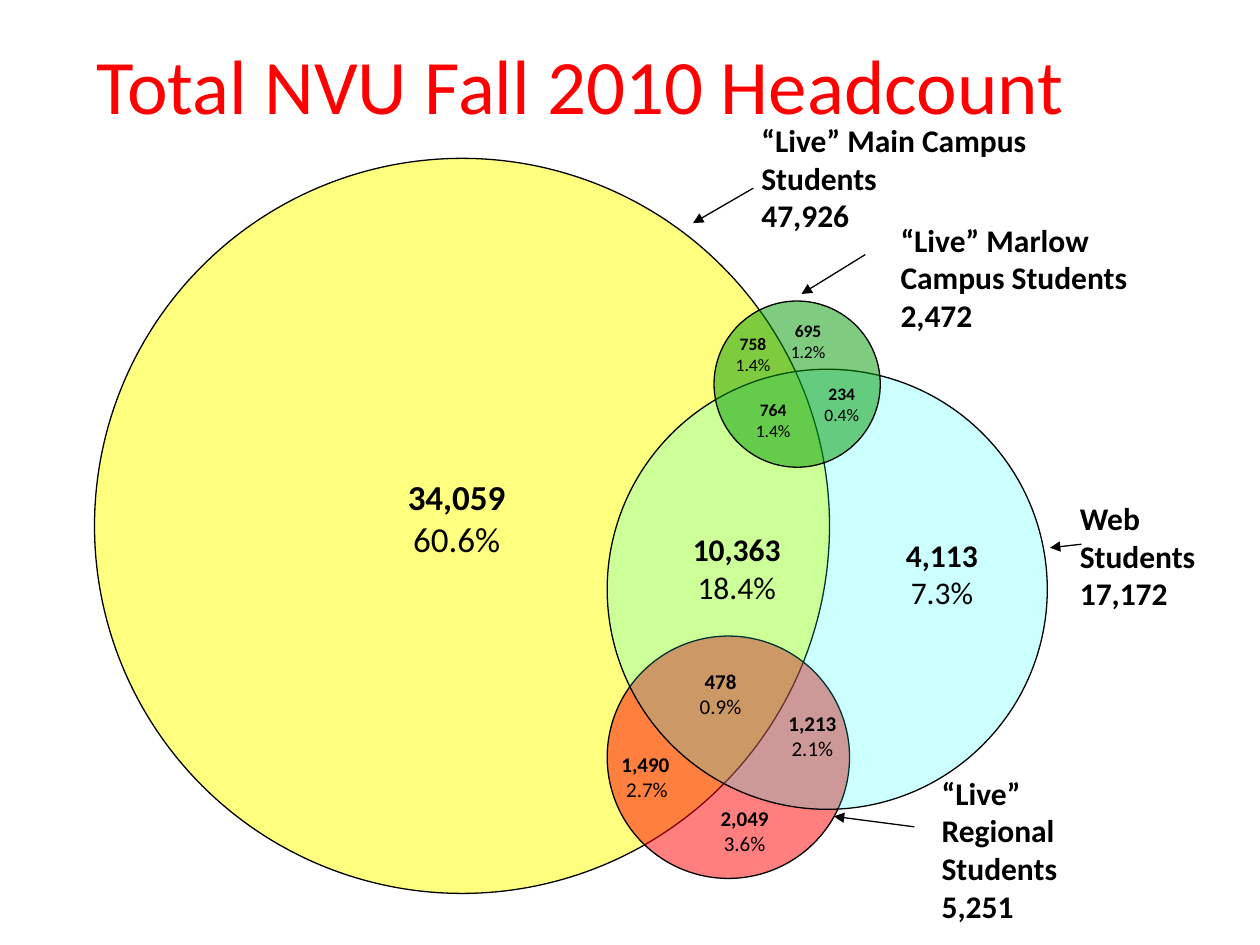
"""Build a Venn diagram slide of student headcount by campus."""
import pptx
import pptx.util
import pptx.dml.color
import pptx.enum.shapes
import pptx.enum.text
import pptx.oxml
import pptx.oxml.ns
from lxml import etree

Pt = pptx.util.Pt
RGBColor = pptx.dml.color.RGBColor
qn = pptx.oxml.ns.qn
LEFT = pptx.enum.text.PP_ALIGN.LEFT
CENTER = pptx.enum.text.PP_ALIGN.CENTER

BLACK = RGBColor(0, 0, 0)
RED = RGBColor(255, 0, 0)
YELLOW = RGBColor(255, 255, 0)
CYAN = RGBColor(0, 255, 255)
GREEN = RGBColor(0, 153, 0)
FONT = "Calibri"


def write_text(shape, lines, size, bold, color=BLACK, align=LEFT):
    """Fill a shape with one paragraph per line; bold has one flag per line."""
    frame = shape.text_frame
    frame.text = "\n".join(lines)
    frame.word_wrap = True
    frame.auto_size = pptx.enum.text.MSO_AUTO_SIZE.NONE
    frame.vertical_anchor = pptx.enum.text.MSO_ANCHOR.TOP
    for paragraph, is_bold in zip(frame.paragraphs, bold):
        paragraph.alignment = align
        font = paragraph.runs[0].font
        font.name = FONT
        font.size = Pt(size)
        font.bold = is_bold
        font.color.rgb = color


presentation = pptx.Presentation()
presentation.slide_width = Pt(720)
presentation.slide_height = Pt(540)
slide = presentation.slides.add_slide(presentation.slide_layouts[5])

title = slide.shapes.title
title.left, title.top, title.width, title.height = Pt(48), Pt(18), Pt(642), Pt(78)
write_text(title, ["Total NVU Fall 2010 Headcount"], 44, [False], color=RED)

circles = [
    (54, 90.5, 420, YELLOW, 50, 0),
    (347, 363.5, 138.5, RED, 50, 0),
    (347, 211, 251.5, CYAN, 20, 0),
    (408, 172, 95, GREEN, 50, 35),
]
for left, top, diameter, color, opacity, rotation in circles:
    circle = slide.shapes.add_shape(
        pptx.enum.shapes.MSO_SHAPE.OVAL, Pt(left), Pt(top), Pt(diameter), Pt(diameter)
    )
    circle.shadow.inherit = False
    circle.rotation = rotation
    circle.fill.solid()
    circle.fill.fore_color.rgb = color
    color_element = circle.fill._xPr.find(qn("a:solidFill"))[0]
    etree.SubElement(color_element, qn("a:alpha"), val=str(opacity * 1000))
    circle.line.color.rgb = BLACK
    circle.line.width = Pt(0.75)

region_labels = [
    (211, 268, 100, 20, CENTER, "34,059", "60.6%"),
    (378, 299.5, 86, 18, CENTER, "10,363", "18.4%"),
    (505.5, 302.5, 65.5, 18, CENTER, "4,113", "7.3%"),
    (390, 378.5, 43.5, 12, CENTER, "478", "0.9%"),
    (438, 402.5, 52.5, 12, CENTER, "1,213", "2.1%"),
    (348, 426, 54, 12, LEFT, "1,490", " 2.7%"),
    (402, 456.5, 47, 12, CENTER, "2,049", "3.6%"),
    (410.5, 187, 39.5, 10, CENTER, "758", "1.4%"),
    (422, 224.5, 39.5, 10, CENTER, "764", "1.4%"),
    (438, 179.5, 47.5, 10, CENTER, "695", "1.2%"),
    (456, 215.5, 50, 10, CENTER, "234", "0.4%"),
]
for left, top, width, size, align, count, share in region_labels:
    label = slide.shapes.add_textbox(Pt(left), Pt(top), Pt(width), Pt(29.5))
    write_text(label, [count, share], size, [True, False], align=align)

captions = [
    (610, 281.5, 97, 31, "Web Students", "17,172"),
    (531, 438.5, 105, 42, "“Live” Regional Students", "5,251"),
    (507.5, 122.5, 167, 32, "“Live” Marlow Campus Students", "2,472"),
    (428, 65.5, 174, 26, "“Live” Main Campus Students", "47,926"),
]
for left, top, width, height, name, count in captions:
    caption = slide.shapes.add_textbox(Pt(left), Pt(top), Pt(width), Pt(height))
    write_text(caption, [name, count], 18, [True, True])

arrows = [
    (618, 311, 600, 313),
    (522.5, 472.5, 476.5, 466.5),
    (494.5, 145.5, 458, 168),
    (430.5, 107.5, 396, 127.5),
]
for ends in arrows:
    arrow = slide.shapes.add_connector(
        pptx.enum.shapes.MSO_CONNECTOR.STRAIGHT, *[Pt(end) for end in ends]
    )
    arrow.line.color.rgb = BLACK
    arrow.line.width = Pt(0.75)
    etree.SubElement(arrow.line._get_or_add_ln(), qn("a:tailEnd"), type="triangle")
    etree.SubElement(arrow._element.spPr, qn("a:effectLst"))

presentation.save("out.pptx")
